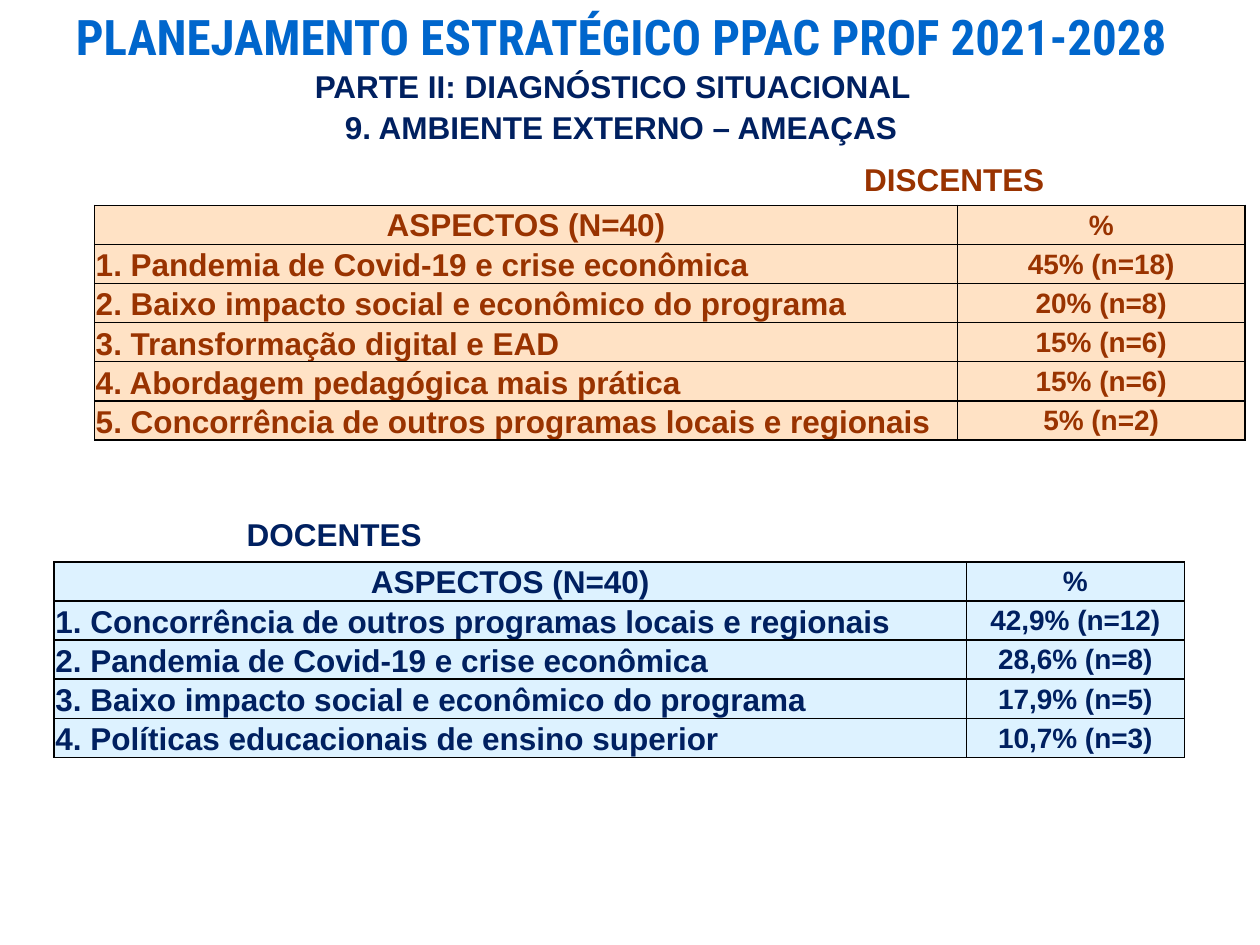
import pptx
import pptx.dml.color
import pptx.enum.text
import pptx.oxml
import pptx.oxml.ns
import pptx.util
from pptx.util import Inches

ALIGN = pptx.enum.text.PP_ALIGN
ANCHOR = pptx.enum.text.MSO_ANCHOR
AUTO_SIZE = pptx.enum.text.MSO_AUTO_SIZE

COLORS = {
    "title": "0066CC",
    "title_outline": "99CCFF",
    "navy": "002060",
    "brown": "993300",
    "peach": "FFE2C5",
    "sky": "DDF2FF",
    "border": "000000",
}

TITLE = ("PLANEJAMENTO ESTRATÉGICO PPAC PROF 2021-2028", (0.48, 0, 8.9, 0.52))

HEADINGS = [
    ("PARTE II: DIAGNÓSTICO SITUACIONAL", (2.4, 0.48, 4.98, 0.4), "navy", ALIGN.LEFT, False),
    ("9. AMBIENTE EXTERNO – AMEAÇAS", (1.33, 0.81, 7.2, 0.4), "navy", ALIGN.CENTER, True),
    ("DISCENTES", (6.76, 1.22, 1.65, 0.4), "brown", ALIGN.LEFT, False),
    ("DOCENTES", (1.86, 4.04, 1.6, 0.4), "navy", ALIGN.LEFT, False),
]

HEADER = ("ASPECTOS (N=40)", "%")
ROW_HEIGHT = 0.31
TABLES = [
    {
        "position": (0.75, 1.63),
        "widths": (6.85, 2.28),
        "color": "brown",
        "fill": "peach",
        "rows": [
            ("1. Pandemia de Covid-19 e crise econômica", "45% (n=18)"),
            ("2. Baixo impacto social e econômico do programa", "20% (n=8)"),
            ("3. Transformação digital e EAD", "15% (n=6)"),
            ("4. Abordagem pedagógica mais prática", "15% (n=6)"),
            ("5. Concorrência de outros programas locais e regionais", "5% (n=2)"),
        ],
    },
    {
        "position": (0.43, 4.46),
        "widths": (7.24, 1.73),
        "color": "navy",
        "fill": "sky",
        "rows": [
            ("1. Concorrência de outros programas locais e regionais", "42,9% (n=12)"),
            ("2. Pandemia de Covid-19 e crise econômica", "28,6% (n=8)"),
            ("3. Baixo impacto social e econômico do programa", "17,9% (n=5)"),
            ("4. Políticas educacionais de ensino superior", "10,7% (n=3)"),
        ],
    },
]

CELL_FORMAT = {
    "margin_left": Inches(0.01),
    "margin_right": Inches(0.01),
    "margin_top": Inches(0.01),
    "margin_bottom": 0,
}


def apply(target, values):
    for name, value in values.items():
        setattr(target, name, value)


def rgb(color):
    return pptx.dml.color.RGBColor.from_string(COLORS[color])


def line_xml(tag, color, width):
    return pptx.oxml.parse_xml(
        f'<a:{tag} {pptx.oxml.ns.nsdecls("a")} w="{pptx.util.Pt(width)}">'
        f'<a:solidFill><a:srgbClr val="{COLORS[color]}"/></a:solidFill></a:{tag}>'
    )


def write(frame, text, size, color, align, font="Arial"):
    paragraph = frame.paragraphs[0]
    paragraph.alignment = align
    run = paragraph.add_run()
    run.text = text
    apply(run.font, {"size": pptx.util.Pt(size), "name": font, "bold": True})
    run.font.color.rgb = rgb(color)
    return run


def add_title(slide):
    text, box = TITLE
    title = slide.shapes.title
    apply(title, dict(zip(("left", "top", "width", "height"), map(Inches, box))))
    apply(title.text_frame, {
        "word_wrap": False,
        "auto_size": AUTO_SIZE.NONE,
        "vertical_anchor": ANCHOR.TOP,
        "margin_bottom": 0,
    })
    run = write(title.text_frame, text, 28, "title", ALIGN.CENTER, "Roboto Condensed")
    run.font._element.insert(0, line_xml("ln", "title_outline", 1.5))


def add_heading(slide, text, box, color, align, wrap):
    frame = slide.shapes.add_textbox(*map(Inches, box)).text_frame
    apply(frame, {"word_wrap": wrap, "auto_size": AUTO_SIZE.SHAPE_TO_FIT_TEXT})
    write(frame, text, 18, color, align)


def add_threat_table(slide, position, widths, color, fill, rows):
    rows = [HEADER, *rows]
    size = (sum(widths), ROW_HEIGHT * len(rows))
    table = slide.shapes.add_table(
        len(rows), len(widths), *map(Inches, position + size)
    ).table
    apply(table, {"first_row": False, "horz_banding": False})
    for column, width in zip(table.columns, widths):
        column.width = Inches(width)
    for row_index, row in enumerate(rows):
        table.rows[row_index].height = Inches(ROW_HEIGHT)
        for column_index, text in enumerate(row):
            is_aspect = row_index > 0 and column_index == 0
            cell = table.cell(row_index, column_index)
            apply(cell, CELL_FORMAT)
            cell.vertical_anchor = ANCHOR.BOTTOM if is_aspect else ANCHOR.MIDDLE
            align = ALIGN.LEFT if is_aspect else ALIGN.CENTER
            write(cell.text_frame, text, (18, 16)[column_index], color, align)
            properties = cell._tc.get_or_add_tcPr()
            for side in ("lnL", "lnR", "lnT", "lnB"):
                properties.append(line_xml(side, "border", 1))
            cell.fill.solid()
            cell.fill.fore_color.rgb = rgb(fill)


def main():
    presentation = pptx.Presentation()
    apply(presentation, {"slide_width": Inches(10), "slide_height": Inches(7.5)})
    slide = presentation.slides.add_slide(presentation.slide_layouts[5])
    add_title(slide)
    for heading in HEADINGS:
        add_heading(slide, *heading)
    for table in TABLES:
        add_threat_table(slide, **table)
    presentation.save("out.pptx")


if __name__ == "__main__":
    main()
